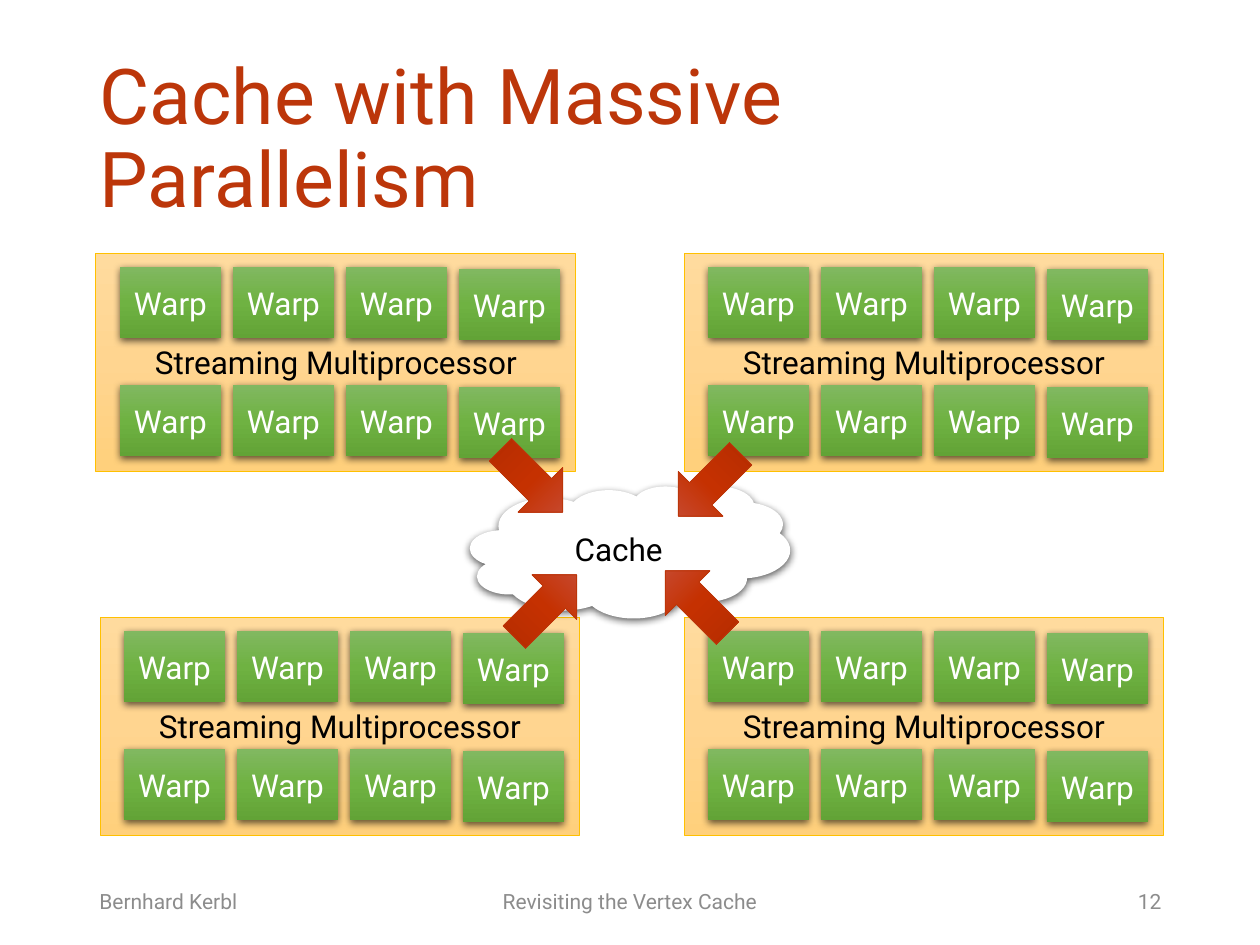
import copy
import dataclasses

import pptx
import pptx.dml.color
import pptx.enum.shapes
import pptx.enum.text
import pptx.oxml
import pptx.oxml.ns
import pptx.util

SHAPES = pptx.enum.shapes.MSO_SHAPE
ALIGN = pptx.enum.text.PP_ALIGN
MIDDLE = pptx.enum.text.MSO_ANCHOR.MIDDLE
EMU_PER_PX = 914400 / 126


@dataclasses.dataclass(frozen=True)
class Theme:
    """Colours, font and type sizes of the slide."""
    font: str = "Roboto"
    title_size: int = 44
    label_size: int = 18
    footer_size: int = 12
    accent: str = "BC360A"
    muted: str = "8C8C8C"
    dark: str = "000000"
    light: str = "FFFFFF"
    border: str = "FFC000"
    processor: tuple = ("FFDB9E", "FFD590", "FFD07C")
    warp: tuple = ("81B861", "6FB242", "62A336")
    arrow: tuple = ("C7584B", "C53101", "B02B00")


THEME = Theme()


def px(value):
    """Turn pixels into EMU."""
    return pptx.util.Emu(round(value * EMU_PER_PX))


def rgb(value):
    """Turn a hex string into a colour."""
    return pptx.dml.color.RGBColor.from_string(value)


def write_text(shape, text, size=THEME.label_size, color=THEME.dark,
               align=ALIGN.CENTER, line_spacing=None):
    """Put one formatted paragraph into a shape."""
    frame = shape.text_frame
    frame.word_wrap = True
    frame.auto_size = pptx.enum.text.MSO_AUTO_SIZE.NONE
    frame.vertical_anchor = MIDDLE
    frame.text = text
    paragraph = frame.paragraphs[0]
    paragraph.alignment = align
    paragraph.line_spacing = line_spacing
    paragraph.font.name = THEME.font
    paragraph.font.size = pptx.util.Pt(size)
    paragraph.font.color.rgb = rgb(color)


def fill_gradient(shape, colors):
    """Fill a shape from top to bottom with three evenly spaced colours."""
    shape.fill.gradient()
    shape.fill.gradient_angle = 270
    stops = shape._element.spPr.find(".//" + pptx.oxml.ns.qn("a:gsLst"))
    stops.insert(1, copy.deepcopy(stops[0]))
    for index, (stop, color) in enumerate(zip(shape.fill.gradient_stops, colors)):
        stop.position = index / 2
        stop.color.rgb = rgb(color)


def add_soft_shadow(shape):
    """Give a shape a small shadow straight below it."""
    effects = shape._element.spPr.find(pptx.oxml.ns.qn("a:effectLst"))
    effects.append(pptx.oxml.parse_xml(
        f'<a:outerShdw {pptx.oxml.ns.nsdecls("a")} blurRad="57150" dist="19050" '
        'dir="5400000" algn="ctr" rotWithShape="0"><a:srgbClr val="000000">'
        '<a:alpha val="63000"/></a:srgbClr></a:outerShdw>'))


def add_block(slide, kind, left, top, width, height, fill, line=None, shadow=False):
    """Add a preset shape with a plain or gradient fill."""
    shape = slide.shapes.add_shape(kind, px(left), px(top), px(width), px(height))
    shape.shadow.inherit = False
    if isinstance(fill, tuple):
        fill_gradient(shape, fill)
    else:
        shape.fill.solid()
        shape.fill.fore_color.rgb = rgb(fill)
    if line:
        shape.line.color.rgb = rgb(line)
        shape.line.width = pptx.util.Pt(0.5)
    else:
        shape.line.fill.background()
    if shadow:
        add_soft_shadow(shape)
    return shape


def add_title(slide, text):
    """Place and format the title placeholder."""
    title = slide.shapes.title
    title.left, title.top, title.width, title.height = map(px, (87, 50, 1086, 183))
    write_text(title, text, size=THEME.title_size, color=THEME.accent,
               align=ALIGN.LEFT, line_spacing=0.9)


def add_footer(slide, text, left, width, align):
    """Add one text of the footer row."""
    box = slide.shapes.add_textbox(px(left), px(876), px(width), px(50))
    write_text(box, text, size=THEME.footer_size, color=THEME.muted, align=align)


def add_processor(slide, left, top):
    """Add a multiprocessor with two rows of four warps, the last set lower."""
    processor = add_block(slide, SHAPES.RECTANGLE, left, top, 480, 218,
                          THEME.processor, line=THEME.border)
    write_text(processor, "Streaming Multiprocessor")
    for row in range(2):
        for column in range(4):
            drop = 2 if column == 3 else 0
            warp = add_block(slide, SHAPES.RECTANGLE, left + 24 + 113 * column,
                             top + 14 + 118 * row + drop, 101, 71,
                             THEME.warp, shadow=True)
            write_text(warp, "Warp", color=THEME.light)


def add_arrow(slide, left, top, rotation):
    """Add a block arrow that points to the cache."""
    arrow = add_block(slide, SHAPES.UP_ARROW, left, top, 63, 88,
                      THEME.arrow, line=THEME.accent)
    arrow.rotation = rotation


def main():
    """Build the slide and save it."""
    presentation = pptx.Presentation()
    presentation.slide_width, presentation.slide_height = px(1260), px(945)
    slide = presentation.slides.add_slide(presentation.slide_layouts[5])
    add_title(slide, "Cache with Massive Parallelism")
    add_footer(slide, "Bernhard Kerbl", 87, 284, ALIGN.LEFT)
    add_footer(slide, "Revisiting the Vertex Cache", 417, 426, ALIGN.CENTER)
    add_footer(slide, "12", 890, 284, ALIGN.RIGHT)
    for left, top in ((684, 253), (684, 617), (100, 617), (96, 253)):
        add_processor(slide, left, top)
    cache = add_block(slide, SHAPES.CLOUD, 470, 486, 320, 132, THEME.light, shadow=True)
    write_text(cache, "Cache")
    for left, top, rotation in ((500, 437, 135), (514, 562, 45),
                                (678, 441, 225), (665, 558, 315)):
        add_arrow(slide, left, top, rotation)
    presentation.save("out.pptx")


if __name__ == "__main__":
    main()
